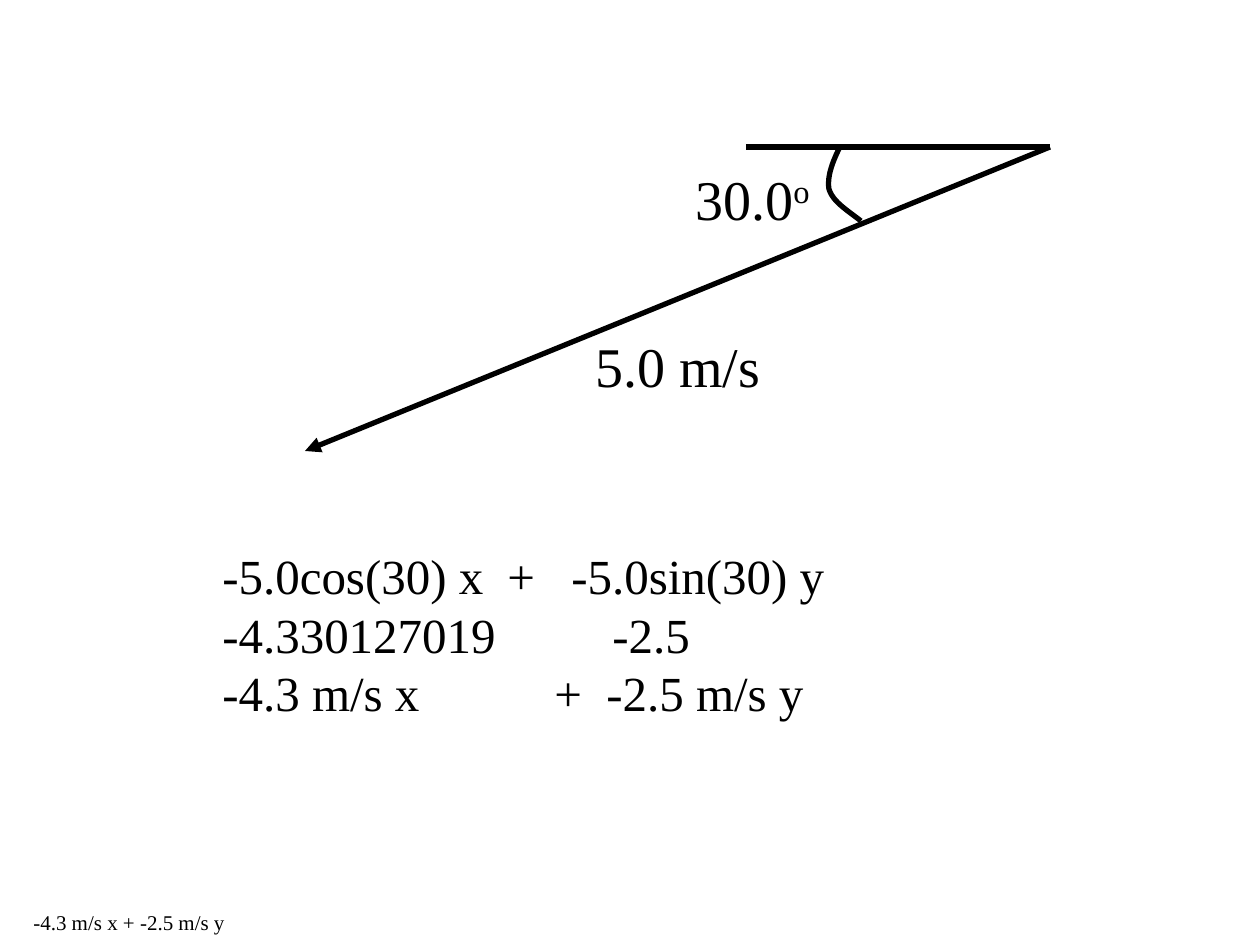
"""Build a slide resolving a velocity vector into x and y components."""
from lxml import etree
from pptx import Presentation
from pptx import util as u
from pptx.dml.color import RGBColor
from pptx.enum import shapes, text
from pptx.oxml.ns import qn

PX = 914400 / 126
COLORS = {"ink": "000000"}
FONT = "Times New Roman"

TEXTS = [
    {"box": (21, 903, 217, 38), "size": 12,
     "lines": [("-4.3 m/s x + -2.5 m/s y", [])]},
    {"box": (583, 325, 190, 79), "size": 32, "lines": [("5.0 m/s", [])]},
    {"box": (683, 158, 141, 79), "size": 32, "lines": [("30.0", [])], "sup": "o"},
    {"box": (210, 539, 635, 190), "size": 28, "lines": [
        ("-5.0cos(30) x\t+\t-5.0sin(30) y", [285, 349]),
        ("-4.330127019\t-2.5", [390]),
        ("-4.3 m/s x\t+\t-2.5 m/s y", [332, 384]),
    ]},
]
VERTEX = (1050, 147)
LINES = [((746, 147), VERTEX, False), (VERTEX, (305, 451), True)]
ANGLE_ARC = [
    [(840, 147), (833, 161), (827, 176), (829, 189)],
    [(829, 189), (833, 202), (847, 210), (861, 221)],
]
STEPS = 12


def emu(*values):
    return [round(v * PX) for v in values]


def ink(color_format):
    color_format.rgb = RGBColor.from_string(COLORS["ink"])


def style_line(line):
    line.width = u.Pt(3)
    ink(line.color)


def bezier(points, t):
    weights = ((1 - t) ** 3, 3 * t * (1 - t) ** 2, 3 * t * t * (1 - t), t ** 3)
    return emu(*(sum(w * v for w, v in zip(weights, axis)) for axis in zip(*points)))


def add_line(s, start, end, arrow):
    line = s.shapes.add_connector(shapes.MSO_CONNECTOR.STRAIGHT, *emu(*start, *end))
    style_line(line.line)
    if arrow:
        etree.SubElement(line.line._get_or_add_ln(), qn("a:tailEnd"), type="triangle")
    etree.SubElement(line._element.spPr, qn("a:effectLst"))


def add_arc(s):
    builder = s.shapes.build_freeform(*emu(*ANGLE_ARC[0][0]), scale=1.0)
    points = [bezier(curve, i / STEPS) for curve in ANGLE_ARC for i in range(1, STEPS + 1)]
    builder.add_line_segments(points, close=False)
    arc = builder.convert_to_shape()
    arc.shadow.inherit = False
    arc.fill.background()
    style_line(arc.line)


def add_run(p, value, size):
    r = p.add_run()
    r.text = value
    for name, setting in {"name": FONT, "size": u.Pt(size)}.items():
        setattr(r.font, name, setting)
    ink(r.font.color)
    return r


def add_text(s, item):
    tf = s.shapes.add_textbox(*emu(*item["box"])).text_frame
    for name, setting in {"word_wrap": False,
                          "auto_size": text.MSO_AUTO_SIZE.SHAPE_TO_FIT_TEXT}.items():
        setattr(tf, name, setting)
    for i, (value, stops) in enumerate(item["lines"]):
        p = tf.add_paragraph() if i else tf.paragraphs[0]
        if stops:
            tabs = etree.SubElement(p._p.get_or_add_pPr(), qn("a:tabLst"))
            for stop in emu(*stops):
                etree.SubElement(tabs, qn("a:tab"), pos=str(stop), algn="l")
        add_run(p, value, item["size"])
    if "sup" in item:
        r = add_run(p, item["sup"], item["size"])
        r._r.get_or_add_rPr().set("baseline", "30000")


def main():
    prs = Presentation()
    prs.slide_width, prs.slide_height = emu(1260, 945)
    s = prs.slides.add_slide(prs.slide_layouts[6])
    for line in LINES:
        add_line(s, *line)
    add_arc(s)
    for item in TEXTS:
        add_text(s, item)
    prs.save("out.pptx")


if __name__ == "__main__":
    main()
